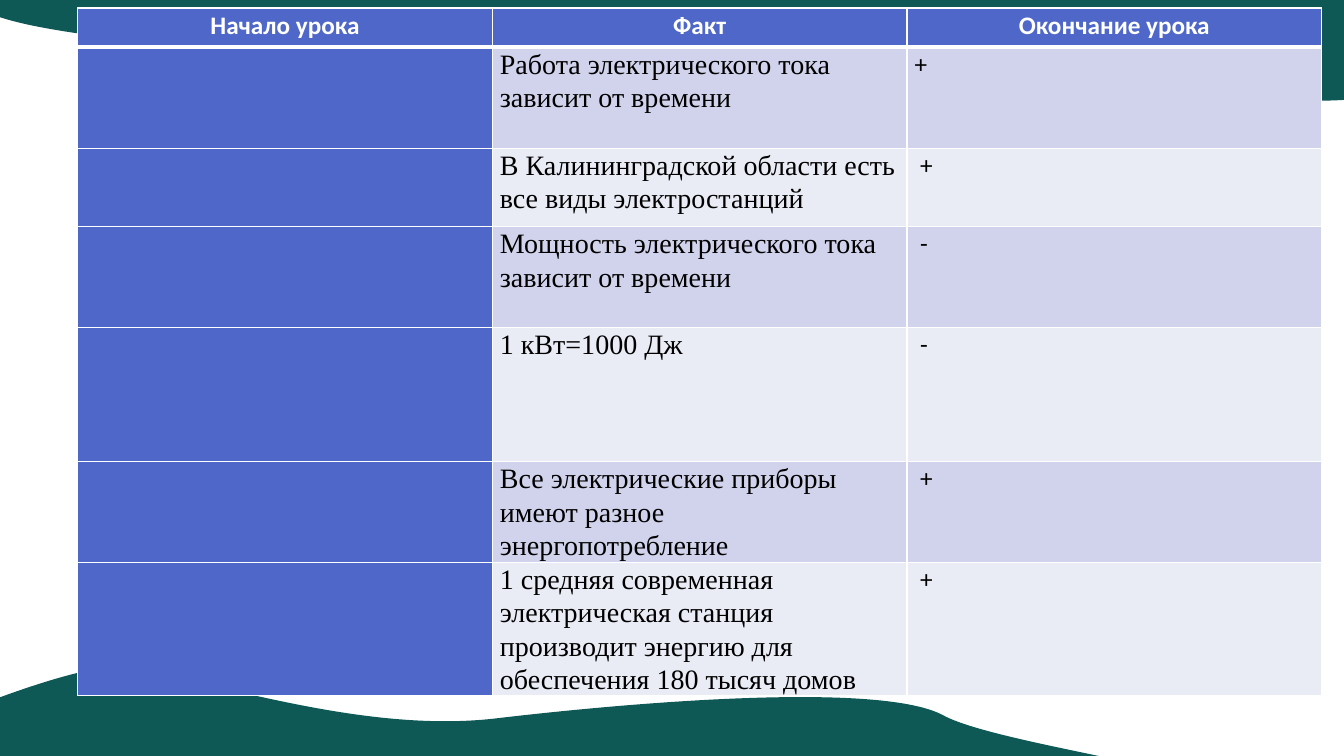
import math

import lxml.etree
import pptx
import pptx.dml.color
import pptx.enum.text
import pptx.oxml.ns
import pptx.util

Inches = pptx.util.Inches
Pt = pptx.util.Pt
qn = pptx.oxml.ns.qn

COLORS = {
    "wave": "0E5856",
    "blue": "4E67C8",
    "dark band": "D0D3EB",
    "light band": "E9EBF5",
    "white": "FFFFFF",
    "black": "000000",
}


def rgb(name):
    return pptx.dml.color.RGBColor.from_string(COLORS[name])


def add_border(cell, side, width):
    """Draw a white line on one side (L, R, T or B) of a cell."""
    properties = cell._tc.get_or_add_tcPr()
    line = lxml.etree.SubElement(properties, qn(f"a:ln{side}"), w=str(Pt(width)))
    fill = lxml.etree.SubElement(line, qn("a:solidFill"))
    lxml.etree.SubElement(fill, qn("a:srgbClr"), val=COLORS["white"])


presentation = pptx.Presentation()
presentation.slide_width = Inches(13.33)
presentation.slide_height = Inches(7.5)
slide = presentation.slides.add_slide(presentation.slide_layouts[6])

# Each wave: frame, rotation, start point, Bezier segments (two controls, end)
waves = [
    ((-1.37, 6.63, 13.89, 1.53), 0, (-1.32, 7.73), [
        ((-1.73, 7.54), (0.39, 6.7), (1.01, 6.63)),
        ((1.64, 6.57), (3.38, 7.3), (4.9, 7.13)),
        ((6.42, 6.95), (8.77, 6.77), (9.36, 7.1)),
        ((9.96, 7.42), (12.83, 7.74), (12.49, 8.06)),
        ((12.15, 8.39), (5.76, 7.8), (3.46, 7.75)),
        ((1.16, 7.69), (-0.91, 7.92), (-1.32, 7.73)),
    ]),
    ((-0.2, -0.58, 14.6, 1.93), 176.7, (14.04, -0.53), [
        ((14.77, -0.33), (14.2, 0.73), (13.62, 0.94)),
        ((13.03, 1.16), (10.23, 0.69), (8.87, 0.58)),
        ((7.51, 0.46), (6.34, 0.1), (5.46, 0.27)),
        ((4.56, 0.35), (3.71, 0.57), (2.77, 0.52)),
        ((1.82, 0.46), (-0.53, 0.28), (-0.21, -0.06)),
        ((0.12, -0.41), (6.9, -0.19), (9.27, -0.27)),
        ((11.65, -0.35), (13.32, -0.73), (14.04, -0.53)),
    ]),
]
for (left, top, width, height), rotation, start, segments in waves:
    right, bottom = left + width, top + height
    builder = slide.shapes.build_freeform(Inches(left), Inches(top))
    builder.add_line_segments([
        (Inches(right), Inches(top)),
        (Inches(right), Inches(bottom)),
        (Inches(left), Inches(bottom)),
    ])
    wave = builder.convert_to_shape()
    wave.rotation = rotation
    wave.shadow.inherit = False
    wave.fill.solid()
    wave.fill.fore_color.rgb = rgb("wave")
    wave.line.fill.background()

    # Replace the frame outline with curves, turned back into the unrotated frame
    outline = wave._element.find(".//" + qn("a:path"))
    for child in list(outline):
        outline.remove(child)
    cosine = math.cos(math.radians(rotation))
    sine = math.sin(math.radians(rotation))
    commands = [("a:moveTo", [start])] + [("a:cubicBezTo", points) for points in segments]
    for tag, points in commands:
        command = lxml.etree.SubElement(outline, qn(tag))
        for x, y in points:
            dx = x - left - width / 2
            dy = y - top - height / 2
            local_x = Inches(width / 2 + dx * cosine + dy * sine)
            local_y = Inches(height / 2 - dx * sine + dy * cosine)
            lxml.etree.SubElement(command, qn("a:pt"), x=str(local_x), y=str(local_y))
    lxml.etree.SubElement(outline, qn("a:close"))

rows = [
    ("Начало урока", "Факт", "Окончание урока"),
    ("", "Работа электрического тока зависит от времени", "+"),
    ("", "В Калининградской области есть все виды электростанций", " +"),
    ("", "Мощность электрического тока зависит от времени", " -"),
    ("", "1 кВт=1000 Дж", " -"),
    ("", "Все электрические приборы имеют разное энергопотребление", " +"),
    ("", "1 средняя современная электрическая станция производит энергию "
         "для обеспечения 180 тысяч домов", " +"),
]
row_heights = [0.39, 1, 0.78, 1, 1.33, 1, 1.29]

table_frame = slide.shapes.add_table(
    len(rows), 3, Inches(0.77), Inches(0.08), Inches(12.34), Inches(7)
)
table = table_frame.table
for column in table.columns:
    column.width = Inches(12.34 / 3)

for row_index, (texts, row_height) in enumerate(zip(rows, row_heights)):
    table.rows[row_index].height = Inches(row_height)
    is_header = row_index == 0
    for column_index, text in enumerate(texts):
        cell = table.cell(row_index, column_index)
        is_fact = column_index == 1 and not is_header
        cell.margin_left = cell.margin_right = Pt(5.4)
        cell.margin_top = cell.margin_bottom = 0

        for side in "LRTB":
            is_header_edge = (row_index, side) in [(0, "B"), (1, "T")]
            add_border(cell, side, 3 if is_header_edge else 1)
        cell.fill.solid()
        if is_header or column_index == 0:
            cell.fill.fore_color.rgb = rgb("blue")
        else:
            cell.fill.fore_color.rgb = rgb("dark band" if row_index % 2 else "light band")

        if not text:
            continue
        cell.text_frame.text = text
        paragraph = cell.text_frame.paragraphs[0]
        paragraph.line_spacing = 1.07
        if is_header:
            paragraph.alignment = pptx.enum.text.PP_ALIGN.CENTER
        for run in paragraph.runs:
            run.font.name = "Times New Roman" if is_fact else "Calibri"
            run.font.size = Pt(20 if is_fact else 18)
            run.font.bold = is_header
            run.font.color.rgb = rgb("white" if is_header else "black")
table_frame.height = Inches(7)

presentation.save("out.pptx")
